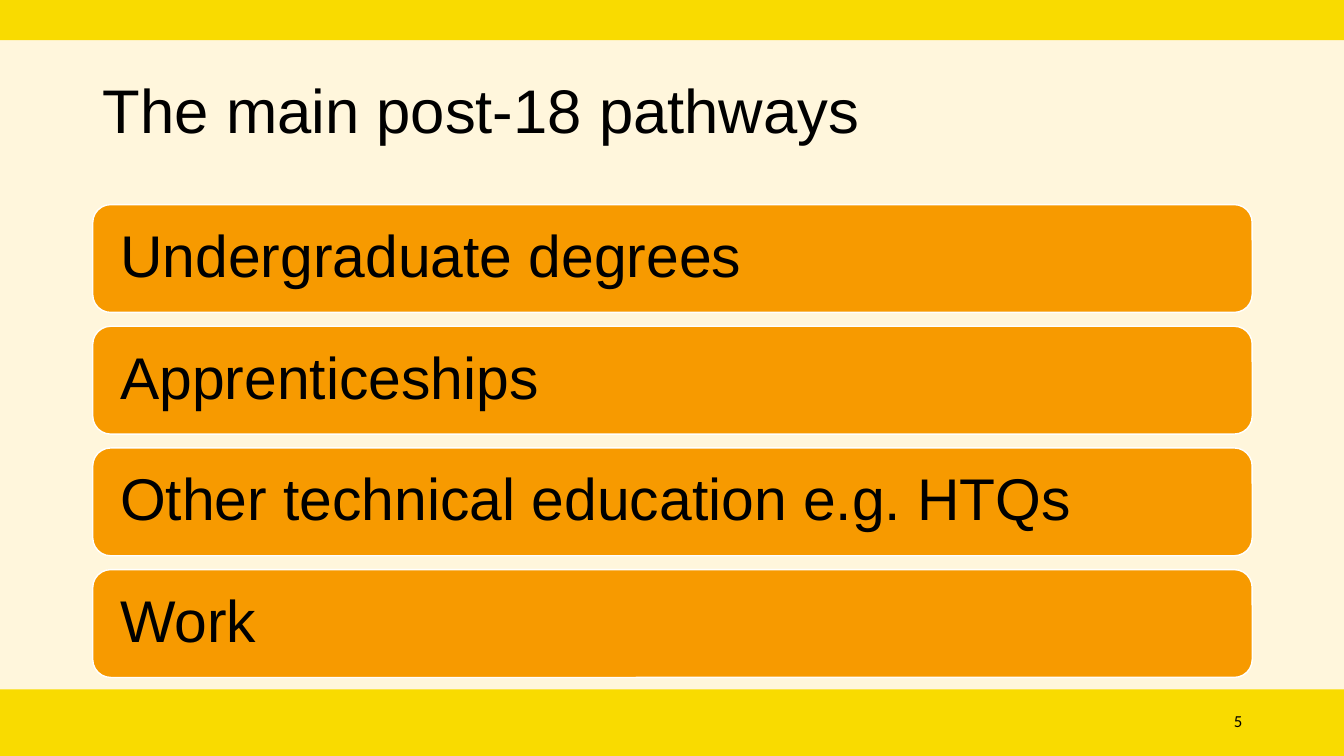
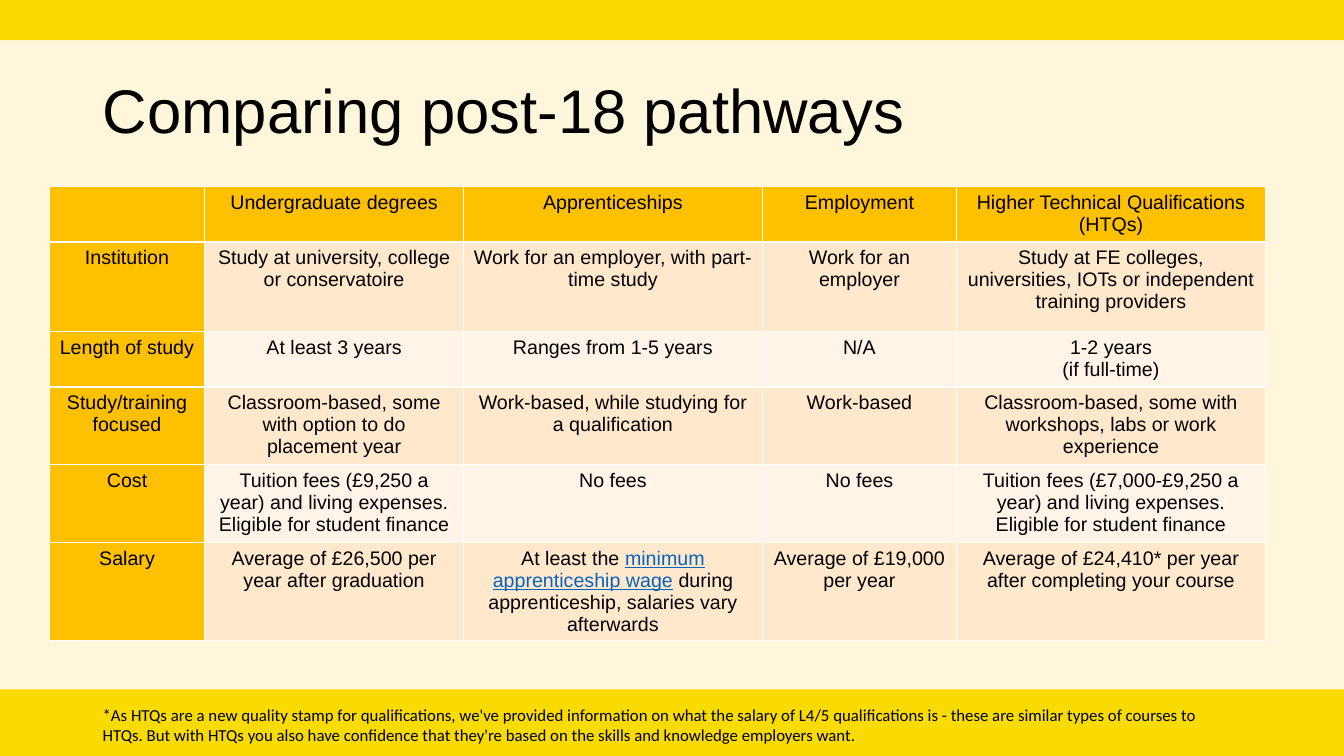
from lxml.etree import SubElement
from pptx import Presentation
from pptx.dml.color import RGBColor
from pptx.enum.shapes import MSO_SHAPE as Shape
from pptx.enum.text import MSO_ANCHOR as Anchor, PP_ALIGN as Align
from pptx.oxml.ns import qn
from pptx.util import Inches, Pt

WIDTH, HEIGHT = 13.33, 7.5
MARGIN = 0.92
CREAM, YELLOW, ORANGE, AMBER = "FFF6DC", "F9DB00", "F79A00", "FFC000"
STRIPES = ("FFE8CC", "FFF4E7")
BLACK, WHITE, BLUE = "000000", "FFFFFF", "0563C1"

BANDS = [(0, 0.4), (6.84, HEIGHT - 6.84)]

PATHWAYS_TITLE = "The main post-18 pathways"
PATHWAYS = [
    "Undergraduate degrees",
    "Apprenticeships",
    "Other technical education e.g. HTQs",
    "Work",
]
PAGE_NUMBER = "5"

COMPARISON_TITLE = "Comparing post-18 pathways"
COMPARISON = [
    ("", "Undergraduate degrees", "Apprenticeships", "Employment",
     "Higher Technical Qualifications (HTQs)"),
    ("Institution", "Study at university, college or conservatoire",
     "Work for an employer, with part-time study", "Work for an employer",
     "Study at FE colleges, universities, IOTs or independent training providers"),
    ("Length of study", "At least 3 years", "Ranges from 1-5 years", "N/A",
     "1-2 years\n(if full-time)"),
    ("Study/training focused",
     "Classroom-based, some with option to do placement year",
     "Work-based, while studying for a qualification", "Work-based",
     "Classroom-based, some with workshops, labs or work experience"),
    ("Cost",
     "Tuition fees (£9,250 a year) and living expenses. Eligible for student finance",
     "No fees", "No fees",
     "Tuition fees (£7,000-£9,250 a year) and living expenses. Eligible for student finance"),
    ("Salary", "Average of £26,500 per year after graduation",
     "At least the minimum apprenticeship wage during apprenticeship, "
     "salaries vary afterwards",
     "Average of £19,000 per year",
     "Average of £24,410* per year after completing your course"),
]
LINKED_WORDS = "minimum apprenticeship wage"
COLUMN_WIDTHS = [1.54, 2.57, 2.96, 1.93, 3.06]
ROW_HEIGHTS = [0.55, 0.89, 0.55, 0.77, 0.77, 0.97]
FOOTNOTE = (
    "*As HTQs are a new quality stamp for qualifications, we've provided "
    "information on what the salary of L4/5 qualifications is - these are "
    "similar types of courses to HTQs. But with HTQs you also have confidence "
    "that they're based on the skills and knowledge employers want."
)


def rgb(code):
    return RGBColor.from_string(code)


def box(left, top, width, height):
    return [Inches(value) for value in (left, top, width, height)]


def style(paragraph, size, face="Arial", align=Align.LEFT, spacing=None):
    paragraph.alignment = align
    paragraph.line_spacing = spacing
    for run in paragraph.runs:
        run.font.size = Pt(size)
        run.font.name = face
        run.font.bold = False
        run.font.color.rgb = rgb(BLACK)


def add_block(shapes, kind, area, fill, line=None):
    block = shapes.add_shape(kind, *box(*area))
    block.shadow.inherit = False
    block.fill.solid()
    block.fill.fore_color.rgb = rgb(fill)
    if line:
        block.line.color.rgb = rgb(line)
        block.line.width = Pt(1)
    else:
        block.line.fill.background()
    return block


def add_note(slide, text, area, anchor, align=Align.LEFT):
    note = slide.shapes.add_textbox(*box(*area))
    frame = note.text_frame
    frame.word_wrap = True
    frame.vertical_anchor = anchor
    frame.text = text
    style(frame.paragraphs[0], 12, "Calibri", align)


def add_slide(deck, layout, heading):
    slide = deck.slides.add_slide(layout)
    title = slide.shapes.title
    title.text_frame.text = heading
    title.text_frame.vertical_anchor = Anchor.MIDDLE
    style(title.text_frame.paragraphs[0], 44, spacing=0.9)
    return slide


def set_up_master(deck, layout):
    master = deck.slide_master
    master.background.fill.solid()
    master.background.fill.fore_color.rgb = rgb(CREAM)
    title = layout.placeholders[0]
    title.left, title.top, title.width, title.height = box(MARGIN, 0.4, 10.04, 1.45)


def move_bands_to_master(deck, slide):
    tree = deck.slide_master.shapes.element
    for position, (top, height) in enumerate(BANDS, start=2):
        band = add_block(slide.shapes, Shape.RECTANGLE, (0, top, WIDTH, height), YELLOW)
        tree.insert(position, band.element)


def add_pathways(slide):
    first_top, card_height, pitch = 2.03, 1.07, 1.207
    for index, pathway in enumerate(PATHWAYS):
        area = (MARGIN, first_top + index * pitch, 11.5, card_height)
        card = add_block(slide.shapes, Shape.ROUNDED_RECTANGLE, area, ORANGE, WHITE)
        frame = card.text_frame
        frame.margin_left = frame.margin_right = Inches(0.22)
        frame.vertical_anchor = Anchor.MIDDLE
        frame.text = pathway
        style(frame.paragraphs[0], 42, spacing=0.9)


def add_borders(cell):
    properties = cell._tc.get_or_add_tcPr()
    for side in ("a:lnL", "a:lnR", "a:lnT", "a:lnB"):
        line = SubElement(properties, qn(side), w=str(Pt(1)))
        fill = SubElement(line, qn("a:solidFill"))
        SubElement(fill, qn("a:srgbClr"), val=WHITE)


def split_link(paragraph):
    before, link, after = paragraph.text.partition(LINKED_WORDS)
    if link:
        paragraph.runs[0].text = before
        for words in (link, after):
            paragraph.add_run().text = words


def fill_cell(cell, text, fill):
    add_borders(cell)
    cell.fill.solid()
    cell.fill.fore_color.rgb = rgb(fill)
    cell.text_frame.text = text
    for paragraph in cell.text_frame.paragraphs:
        split_link(paragraph)
        style(paragraph, 14, align=Align.CENTER)
        for run in paragraph.runs:
            if run.text == LINKED_WORDS:
                run.font.color.rgb = rgb(BLUE)
                run.font.underline = True


def add_comparison(slide):
    area = (0.49, 1.85, sum(COLUMN_WIDTHS), sum(ROW_HEIGHTS))
    table = slide.shapes.add_table(
        len(ROW_HEIGHTS), len(COLUMN_WIDTHS), *box(*area)).table
    for column, width in zip(table.columns, COLUMN_WIDTHS):
        column.width = Inches(width)
    for row, height in zip(table.rows, ROW_HEIGHTS):
        row.height = Inches(height)
    for r, texts in enumerate(COMPARISON):
        for c, text in enumerate(texts):
            heading = r == 0 or c == 0
            fill_cell(table.cell(r, c), text, AMBER if heading else STRIPES[(r - 1) % 2])


def main():
    deck = Presentation()
    deck.slide_width, deck.slide_height = Inches(WIDTH), Inches(HEIGHT)
    layout = deck.slide_layouts.get_by_name("Title Only")
    set_up_master(deck, layout)

    pathways = add_slide(deck, layout, PATHWAYS_TITLE)
    move_bands_to_master(deck, pathways)
    add_pathways(pathways)
    add_note(pathways, PAGE_NUMBER, (9.42, 6.95, 3, 0.4), Anchor.MIDDLE, Align.RIGHT)

    comparison = add_slide(deck, layout, COMPARISON_TITLE)
    add_comparison(comparison)
    add_note(comparison, FOOTNOTE, (MARGIN, 6.94, 11.34, 0.5), Anchor.TOP)

    deck.save("out.pptx")


if __name__ == "__main__":
    main()
